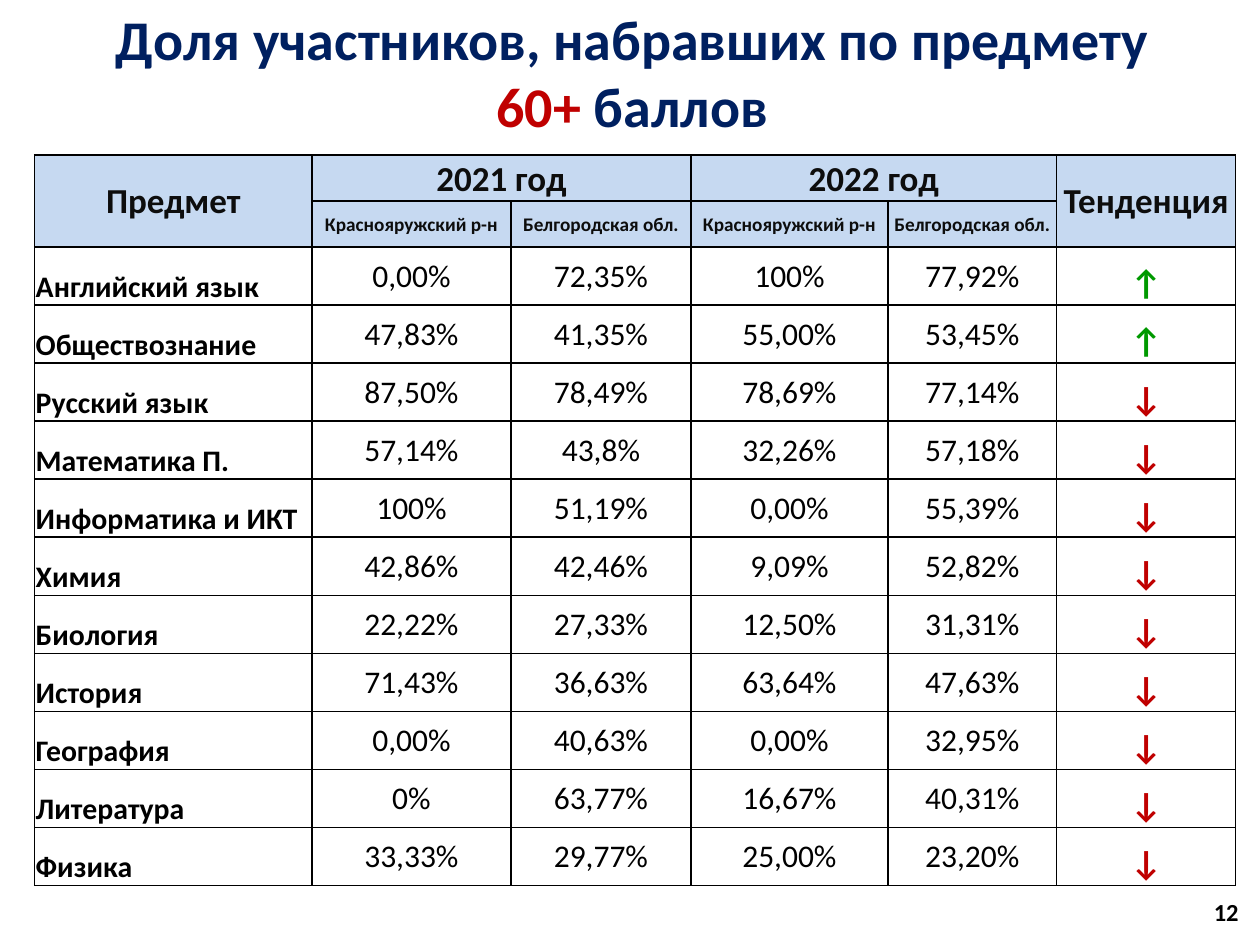
from lxml import etree
from pptx import Presentation
from pptx import util as u
from pptx.dml import color
from pptx.enum import text
from pptx.oxml import ns

SUBJECTS = [
    ("Английский язык", "0,00%", "72,35%", "100%", "77,92%", "↑"),
    ("Обществознание", "47,83%", "41,35%", "55,00%", "53,45%", "↑"),
    ("Русский язык", "87,50%", "78,49%", "78,69%", "77,14%", "↓"),
    ("Математика П.", "57,14%", "43,8%", "32,26%", "57,18%", "↓"),
    ("Информатика и ИКТ", "100%", "51,19%", "0,00%", "55,39%", "↓"),
    ("Химия", "42,86%", "42,46%", "9,09%", "52,82%", "↓"),
    ("Биология", "22,22%", "27,33%", "12,50%", "31,31%", "↓"),
    ("История", "71,43%", "36,63%", "63,64%", "47,63%", "↓"),
    ("География", "0,00%", "40,63%", "0,00%", "32,95%", "↓"),
    ("Литература", "0%", "63,77%", "16,67%", "40,31%", "↓"),
    ("Физика", "33,33%", "29,77%", "25,00%", "23,20%", "↓"),
]
REGIONS = ["Краснояружский р-н", "Белгородская обл."]
HEADINGS = [
    (0, 0, 1, 0, "Предмет"),
    (0, 1, 0, 2, "2021 год"),
    (0, 3, 0, 4, "2022 год"),
    (0, 5, 1, 5, "Тенденция"),
]
COLUMNS = [5.59, 4.01, 3.63, 3.97, 3.4, 3.61]
HEADER_ROW, BODY_ROW = 0.93, 1.17
ARROW_COLORS = {"↑": "009900", "↓": "C00000"}
MIDDLE, BOTTOM = text.MSO_ANCHOR.MIDDLE, text.MSO_ANCHOR.BOTTOM
LEFT, CENTER, RIGHT = text.PP_ALIGN.LEFT, text.PP_ALIGN.CENTER, text.PP_ALIGN.RIGHT


def rgb(value):
    return color.RGBColor.from_string(value)


class Painter:
    font = "Calibri"
    header_fill = "C6D9F1"
    header_ink = "0D0D0D"
    ink = "000000"

    def __init__(self, page):
        self.page = page

    def style(self, span, size, ink, bold=True):
        span.font.name = self.font
        span.font.size = u.Pt(size)
        span.font.bold = bold
        span.font.color.rgb = rgb(ink)

    def title(self, left, top, width, height, spans):
        box = self.page.shapes.title
        box.left, box.top = u.Cm(left), u.Cm(top)
        box.width, box.height = u.Cm(width), u.Cm(height)
        frame = box.text_frame
        frame.word_wrap = True
        frame.auto_size = text.MSO_AUTO_SIZE.NONE
        frame.vertical_anchor = MIDDLE
        para = frame.paragraphs[0]
        para.alignment = CENTER
        for words, ink in spans:
            span = para.add_run()
            span.text = words
            self.style(span, 32, ink)

    def label(self, left, top, width, height, words):
        box = self.page.shapes.add_textbox(u.Cm(left), u.Cm(top), u.Cm(width), u.Cm(height))
        frame = box.text_frame
        frame.word_wrap = True
        frame.vertical_anchor = MIDDLE
        frame.text = words
        para = frame.paragraphs[0]
        para.alignment = RIGHT
        self.style(para.runs[0], 14, self.ink)

    def table(self, left, top, columns, rows):
        frame = self.page.shapes.add_table(
            len(rows), len(columns), u.Cm(left), u.Cm(top), u.Cm(sum(columns)), u.Cm(sum(rows))
        )
        grid = frame.table
        for column, width in zip(grid.columns, columns):
            column.width = u.Cm(width)
        for row, height in zip(grid.rows, rows):
            row.height = u.Cm(height)
        for cell in grid.iter_cells():
            self.border(cell)
            cell.fill.background()
        return grid

    def border(self, cell):
        properties = cell._tc.get_or_add_tcPr()
        for side in ("a:lnL", "a:lnR", "a:lnT", "a:lnB"):
            line = etree.SubElement(properties, ns.qn(side), w=str(u.Pt(1)))
            fill = etree.SubElement(line, ns.qn("a:solidFill"))
            etree.SubElement(fill, ns.qn("a:srgbClr"), val=self.ink)

    def cell(self, cell, words, size, ink, bold=True, align=CENTER, anchor=MIDDLE):
        cell.margin_left = cell.margin_right = cell.margin_top = u.Cm(0.02)
        cell.margin_bottom = 0
        cell.vertical_anchor = anchor
        cell.text = words
        para = cell.text_frame.paragraphs[0]
        para.alignment = align
        self.style(para.runs[0], size, ink, bold)

    def heading(self, cell, words, size, anchor=MIDDLE):
        self.cell(cell, words, size, self.header_ink, anchor=anchor)
        cell.fill.solid()
        cell.fill.fore_color.rgb = rgb(self.header_fill)


def main():
    deck = Presentation()
    deck.slide_width, deck.slide_height = u.Cm(25.4), u.Cm(19.05)
    painter = Painter(deck.slides.add_slide(deck.slide_layouts[5]))

    rows = [HEADER_ROW] * 2 + [BODY_ROW] * len(SUBJECTS)
    grid = painter.table(0.7, 3.12, COLUMNS, rows)
    for top, left, bottom, right, words in HEADINGS:
        cell = grid.cell(top, left)
        cell.merge(grid.cell(bottom, right))
        painter.heading(cell, words, 20, MIDDLE if bottom else BOTTOM)
    for column, region in enumerate(REGIONS * 2, start=1):
        painter.heading(grid.cell(1, column), region, 11)
    for row, (subject, *shares, arrow) in enumerate(SUBJECTS, start=2):
        painter.cell(grid.cell(row, 0), subject, 17, painter.ink, align=LEFT, anchor=BOTTOM)
        for column, share in enumerate(shares, start=1):
            painter.cell(grid.cell(row, column), share, 18, painter.ink, bold=False)
        painter.cell(grid.cell(row, 5), arrow, 20, ARROW_COLORS[arrow], anchor=BOTTOM)

    painter.title(1.32, -0.15, 22.86, 3.18, [
        ("Доля участников, набравших по предмету ", "002060"),
        ("60+ ", "C00000"),
        ("баллов", "002060"),
    ])
    painter.label(19.3, 17.86, 5.92, 1.02, "12")
    deck.save("out.pptx")


if __name__ == "__main__":
    main()
